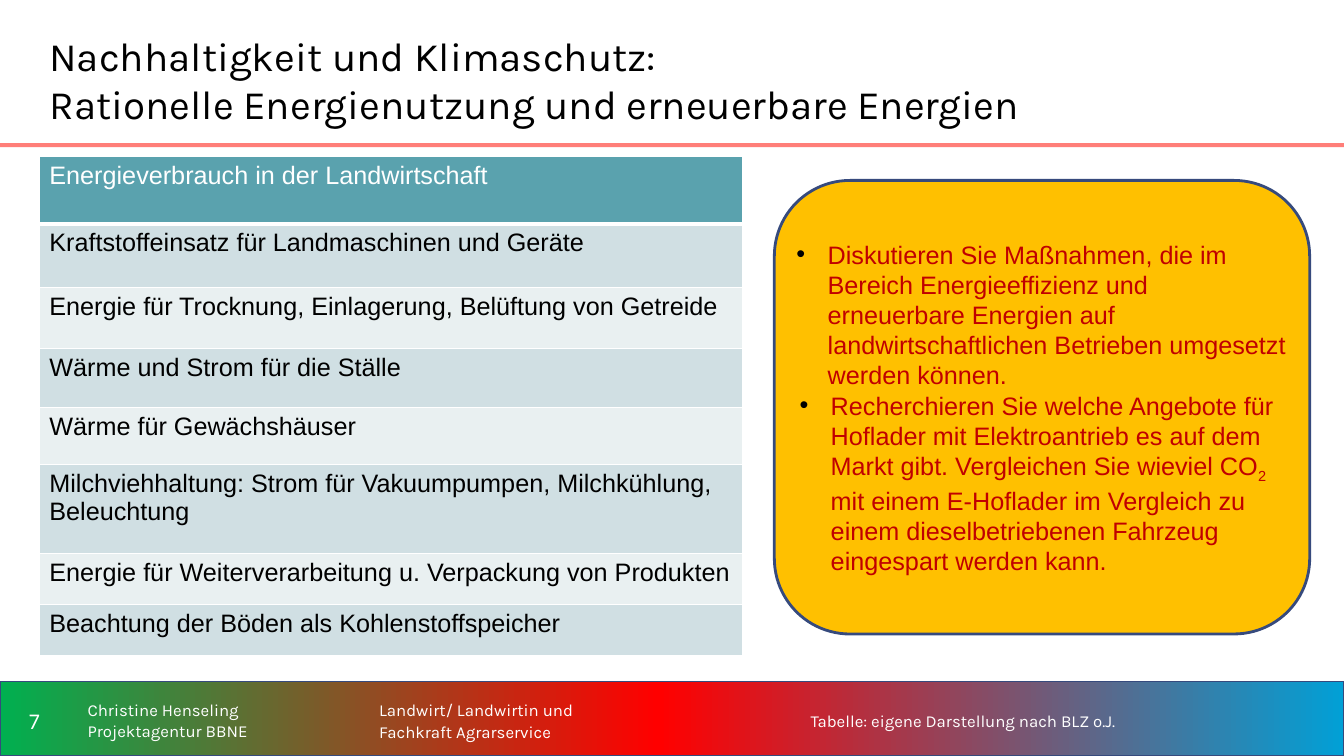
from copy import deepcopy
from dataclasses import dataclass

from lxml import etree
from pptx import Presentation
from pptx import util as u
from pptx.dml.color import RGBColor
from pptx.enum import shapes, text
from pptx.oxml.ns import qn


@dataclass(frozen=True)
class Theme:
    white: str = "FFFFFF"
    black: str = "000000"
    outline: str = "364A7D"
    rule: str = "FF7E79"
    task_fill: str = "FFC000"
    task_text: str = "C00000"
    header: str = "5AA2AE"
    bands: tuple = ("D0DFE3", "E9F0F1")
    footer: tuple = ((0, "00B050"), (49, "FF0000"), (100, "01A0D6"))
    title_size: float = 28.8
    body_size: int = 18
    number_size: int = 16
    footer_size: int = 12


theme = Theme()


def write(frame, lines, size, color, name, line_spacing=None,
          anchor=text.MSO_ANCHOR.MIDDLE, align=text.PP_ALIGN.LEFT):
    """Fill a text frame, one paragraph per line."""
    frame.text = "\n".join(lines)
    frame.word_wrap = True
    frame.auto_size = text.MSO_AUTO_SIZE.NONE
    frame.vertical_anchor = anchor
    paragraph_format = {"alignment": align, "space_before": u.Pt(0),
                        "line_spacing": line_spacing}
    font_format = {"size": u.Pt(size), "name": name, "bold": False}
    for paragraph in frame.paragraphs:
        for key, value in paragraph_format.items():
            setattr(paragraph, key, value)
        for run in paragraph.runs:
            for key, value in font_format.items():
                setattr(run.font, key, value)
            run.font.color.rgb = RGBColor.from_string(color)


def add_block(kind, box, fill=None, line=None, width=1):
    """Add a preset shape without shadow."""
    shape = slide.shapes.add_shape(kind, *map(u.Inches, box))
    shape.shadow.inherit = False
    if fill:
        shape.fill.solid()
        shape.fill.fore_color.rgb = RGBColor.from_string(fill)
    if line:
        shape.line.color.rgb = RGBColor.from_string(line)
        shape.line.width = u.Pt(width)
    else:
        shape.line.fill.background()
    return shape


presentation = Presentation()
presentation.slide_width = u.Inches(13.33)
presentation.slide_height = u.Inches(7.5)
slide = presentation.slides.add_slide(presentation.slide_layouts[4])
placeholders = {shape.placeholder_format.idx: shape for shape in slide.placeholders}
for index in (2, 4):
    element = placeholders[index].element
    element.getparent().remove(element)

# Footer band with a three-colour gradient, and the rule below the title
band = add_block(shapes.MSO_SHAPE.RECTANGLE, (0, 6.76, 13.33, 0.74), line=theme.outline)
band.fill.gradient()
band.fill.gradient_angle = 0
stop_list = next(band.element.iter(qn("a:gsLst")))
stop_list.insert(1, deepcopy(stop_list[0]))
for stop, (position, color) in zip(band.fill.gradient_stops, theme.footer):
    stop.position = position / 100
    stop.color.rgb = RGBColor.from_string(color)
add_block(shapes.MSO_SHAPE.RECTANGLE, (0, 1.42, 13.33, 0.04), fill=theme.rule)

# Title and footer texts; the body placeholders lie above the band
number = slide.shapes.add_textbox(0, 0, 0, 0)
author = slide.shapes.add_textbox(0, 0, 0, 0)
title, job, source = (placeholders[index] for index in (0, 1, 3))
for shape, box in (
    (title, (0.39, 0.2, 9.84, 1.18)),
    (number, (0, 6.84, 0.68, 0.61)),
    (author, (0.77, 6.84, 2.78, 0.61)),
    (job, (3.66, 6.84, 4.19, 0.61)),
    (source, (7.94, 6.84, 5.05, 0.61)),
):
    shape.left, shape.top, shape.width, shape.height = map(u.Inches, box)
for shape in (job, source):
    band.element.getparent().append(shape.element)

write(title.text_frame,
      ["Nachhaltigkeit und Klimaschutz: \vRationelle Energienutzung und erneuerbare Energien"],
      theme.title_size, theme.black, "Karla")
write(number.text_frame, ["7"], theme.number_size, theme.white, "Calibri",
      align=text.PP_ALIGN.CENTER)
for shape, lines, spacing in (
    (author, ["Christine Henseling", "Projektagentur BBNE"], None),
    (job, ["Landwirt/ Landwirtin und", "Fachkraft Agrarservice"], 1.1),
    (source, ["Tabelle: eigene Darstellung nach BLZ o.J."], 1.1),
):
    write(shape.text_frame, lines, theme.footer_size, theme.white, "Karla", spacing)
for paragraph in job.text_frame.paragraphs:
    properties = paragraph._p.get_or_add_pPr()
    properties.set("marL", str(u.Inches(0.04)))
    properties.set("indent", str(u.Inches(-0.04)))

# Task box with bullets
task = add_block(shapes.MSO_SHAPE.ROUNDED_RECTANGLE, (7.68, 1.79, 5.31, 4.5),
                 theme.task_fill, theme.outline, 2)
frame = task.text_frame
for side in ("left", "top", "right", "bottom"):
    setattr(frame, f"margin_{side}", 0)
write(frame, [
    "Diskutieren Sie Maßnahmen, die im Bereich Energieeffizienz und erneuerbare "
    "Energien auf landwirtschaftlichen Betrieben umgesetzt werden können.",
    "Recherchieren Sie welche Angebote für Hoflader mit Elektroantrieb es auf dem "
    "Markt gibt. Vergleichen Sie wieviel CO",
], theme.body_size, theme.task_text, "Arial")
for paragraph, margin in zip(frame.paragraphs, (0.31, 0.34)):
    properties = paragraph._p.get_or_add_pPr()
    properties.set("marL", str(u.Inches(margin)))
    properties.set("indent", str(u.Inches(-0.31)))
    bullet_color = etree.SubElement(properties, qn("a:buClr"))
    etree.SubElement(bullet_color, qn("a:srgbClr"), val=theme.black)
    etree.SubElement(properties, qn("a:buFont"), typeface="Arial")
    etree.SubElement(properties, qn("a:buChar"), char="•")
research = frame.paragraphs[1]
for words, baseline in (
    ("2", -25000),
    (" mit einem E-Hoflader im Vergleich zu einem dieselbetriebenen Fahrzeug "
     "eingespart werden kann.", 0),
):
    run = research.add_run()
    run.text = words
    for key, value in {"size": u.Pt(theme.body_size), "name": "Arial"}.items():
        setattr(run.font, key, value)
    run.font.color.rgb = RGBColor.from_string(theme.task_text)
    run.font._element.set("baseline", str(baseline))

# Table of energy uses
rows = (
    ("Energieverbrauch in der Landwirtschaft", 0.67),
    ("Kraftstoffeinsatz für Landmaschinen und Geräte", 0.63),
    ("Energie für Trocknung, Einlagerung, Belüftung von Getreide", 0.61),
    ("Wärme und Strom für die Ställe", 0.58),
    ("Wärme für Gewächshäuser", 0.57),
    ("Milchviehhaltung: Strom für Vakuumpumpen, Milchkühlung, Beleuchtung", 0.88),
    ("Energie für Weiterverarbeitung u. Verpackung von Produkten", 0.51),
    ("Beachtung der Böden als Kohlenstoffspeicher", 0.51),
)
table = slide.shapes.add_table(len(rows), 1, u.Inches(0.39), u.Inches(1.55),
                               u.Inches(6.98), u.Inches(4.95)).table
for index, (words, height) in enumerate(rows):
    table.rows[index].height = u.Inches(height)
    cell = table.cell(index, 0)
    is_header = index == 0
    write(cell.text_frame, [words], theme.body_size,
          theme.white if is_header else theme.black, "Arial",
          anchor=text.MSO_ANCHOR.TOP)
    cell.fill.solid()
    cell.fill.fore_color.rgb = RGBColor.from_string(
        theme.header if is_header else theme.bands[(index - 1) % 2])
    # White borders, thicker between header and body
    properties = cell._tc.get_or_add_tcPr()
    for order, side in enumerate("LRTB"):
        thick = (index, side) in ((0, "B"), (1, "T"))
        border = etree.Element(qn(f"a:ln{side}"), w=str(u.Pt(3 if thick else 1)))
        solid = etree.SubElement(border, qn("a:solidFill"))
        etree.SubElement(solid, qn("a:srgbClr"), val=theme.white)
        properties.insert(order, border)

presentation.save("out.pptx")
